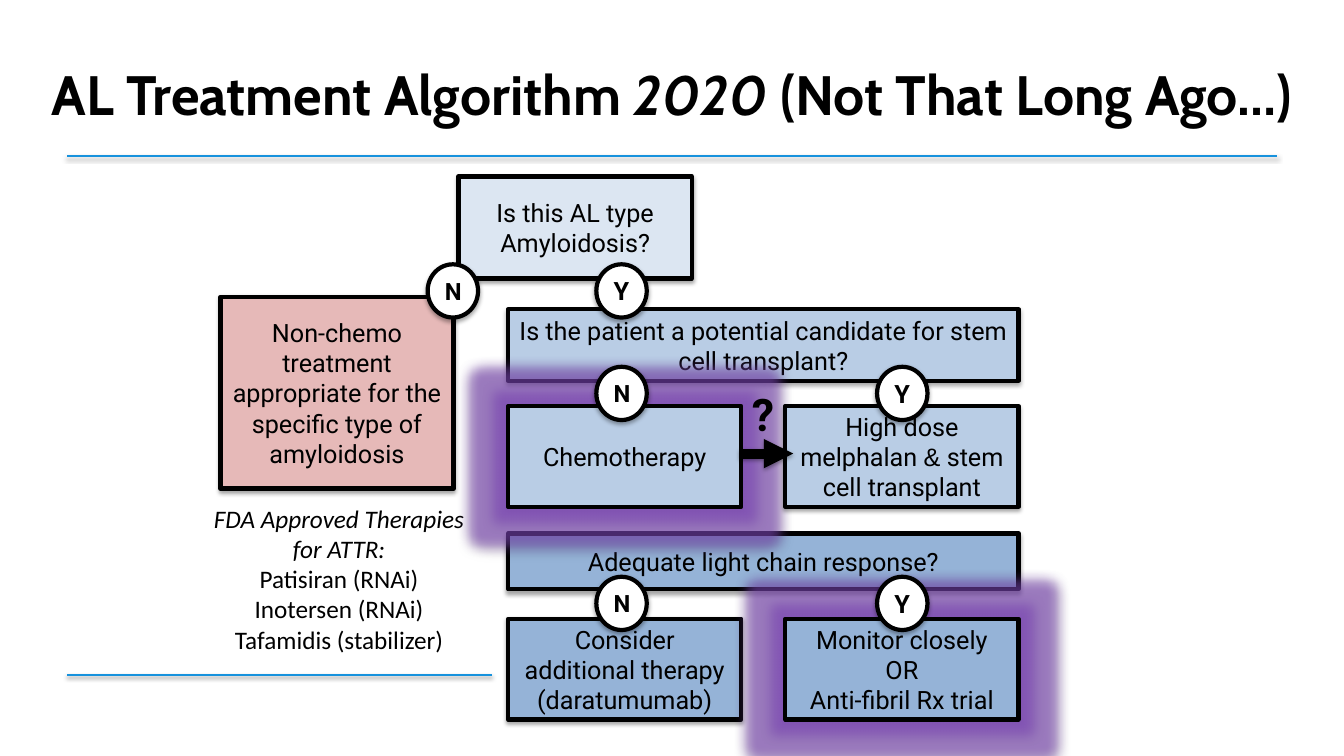
from dataclasses import dataclass

from lxml import etree
from pptx import Presentation
from pptx.dml.color import RGBColor
from pptx.enum import shapes, text
from pptx.oxml import ns
from pptx.util import Pt


@dataclass(frozen=True)
class Theme:
    ink: str = "000000"
    paper: str = "FFFFFF"
    rule: str = "1792DD"
    glow: str = "7B45B5"
    first_step: str = "DCE6F2"
    other_type: str = "E6B9B8"
    transplant_step: str = "B9CDE5"
    response_step: str = "95B3D7"
    title_size: float = 39.6
    body_size: float = 18
    no_size: float = 17
    question_size: float = 32
    title_font: str = "Cabin"
    body_font: str = "Roboto"
    note_font: str = "Calibri"


THEME = Theme()
NARROW, WIDE = 166.5, 364.5
LEFT_COLUMN, RIGHT_COLUMN = 363, 561
NO_X, YES_X = 426, 626.5
STEP_HEIGHT = 72


def color(code):
    return RGBColor.from_string(code)


def write(shape, paragraphs, font=THEME.body_font, size=THEME.body_size, bold=False,
          italic=False, align=text.PP_ALIGN.CENTER, anchor=text.MSO_ANCHOR.MIDDLE, wrap=True):
    """Each paragraph is a string or a list of (words, format changes) runs."""
    frame = shape.text_frame
    frame.word_wrap = wrap
    frame.vertical_anchor = anchor
    for index, content in enumerate(paragraphs):
        paragraph = frame.add_paragraph() if index else frame.paragraphs[0]
        paragraph.alignment = align
        for words, changes in [(content, {})] if isinstance(content, str) else content:
            run = paragraph.add_run()
            run.text = words
            run.font.name = changes.get("font", font)
            run.font.size = Pt(size)
            run.font.bold = bold
            run.font.italic = changes.get("italic", italic)
            run.font.color.rgb = color(THEME.ink)


def add_effects(shape, distance, opacity, glow=False):
    """Give a shape or line a soft shadow below, and a glow if asked."""
    def child(parent, tag, **attributes):
        return etree.SubElement(parent, ns.qn(tag), {k: str(v) for k, v in attributes.items()})

    def tint(parent, code, percent):
        child(child(parent, "a:srgbClr", val=code), "a:alpha", val=percent * 1000)

    effects = child(shape._element.spPr, "a:effectLst")
    if glow:
        tint(child(effects, "a:glow", rad=Pt(18)), THEME.glow, 60)
    shadow = child(effects, "a:outerShdw", blurRad=Pt(3.1), dist=Pt(distance),
                   dir=5400000, rotWithShape=0)
    tint(shadow, THEME.ink, opacity)


def add_node(slide, kind, left, top, width, height, fill, paragraphs, glow=False, **style):
    node = slide.shapes.add_shape(kind, Pt(left), Pt(top), Pt(width), Pt(height))
    node.fill.solid()
    node.fill.fore_color.rgb = color(fill)
    node.line.color.rgb = color(THEME.ink)
    node.line.width = Pt(3)
    add_effects(node, 1.8, 35, glow)
    write(node, paragraphs, **style)


def add_step(slide, left, top, width, height, fill, paragraphs, glow=False):
    add_node(slide, shapes.MSO_SHAPE.RECTANGLE, left, top, width, height, fill, paragraphs, glow)


def add_answer(slide, left, top, letter):
    size = THEME.no_size if letter == "N" else THEME.body_size
    add_node(slide, shapes.MSO_SHAPE.OVAL, left, top, 36, 38, THEME.paper, [letter],
             size=size, bold=True)


def add_line(slide, start, end, y, stroke, width, arrow=False):
    line = slide.shapes.add_connector(shapes.MSO_CONNECTOR.STRAIGHT,
                                      Pt(start), Pt(y), Pt(end), Pt(y))
    line.line.color.rgb = color(stroke)
    line.line.width = Pt(width)
    if arrow:
        etree.SubElement(line.line._get_or_add_ln(), ns.qn("a:tailEnd"), type="triangle")
    add_effects(line, 1.6, 38)


def add_note(slide, left, top, width, height, paragraphs, **style):
    note = slide.shapes.add_textbox(Pt(left), Pt(top), Pt(width), Pt(height))
    write(note, paragraphs, anchor=text.MSO_ANCHOR.TOP, wrap=False, **style)


def add_title(slide):
    title = slide.shapes.title
    title.left, title.top, title.width, title.height = Pt(0), Pt(21.6), Pt(960), Pt(90)
    title.text_frame.auto_size = text.MSO_AUTO_SIZE.NONE
    write(title, [[("AL Treatment Algorithm ", {}), ("2020 ", {"italic": True}),
                   ("(Not That Long Ago…)", {})]],
          font=THEME.title_font, size=THEME.title_size, bold=True)


def add_type_question(slide):
    add_step(slide, 327.6, 126, NARROW, 73, THEME.first_step, ["Is this AL type Amyloidosis?"])
    add_step(slide, 157.5, 212, NARROW, 137, THEME.other_type,
             ["Non-chemo treatment appropriate for the specific type of amyloidosis"])
    add_answer(slide, 305.5, 188.8, "N")
    add_note(slide, 144.7, 355.7, 195, 116.6,
             [[("FDA Approved Therapies", {"italic": True})], [("for ATTR:", {"italic": True})],
              "Patisiran (RNAi)", "Inotersen (RNAi)", "Tafamidis (stabilizer)"],
             font=THEME.note_font)


def add_response_question(slide):
    fill = THEME.response_step
    add_step(slide, LEFT_COLUMN, 381, WIDE, 40, fill, ["Adequate light chain response?"])
    add_step(slide, LEFT_COLUMN, 442, NARROW, STEP_HEIGHT, fill,
             ["Consider additional therapy", "(daratumumab)"])
    add_step(slide, RIGHT_COLUMN, 442, NARROW, STEP_HEIGHT, fill,
             ["Monitor closely", "OR", "Anti-fibril Rx trial"], glow=True)
    add_answer(slide, YES_X, 412, "Y")
    add_answer(slide, NO_X, 412, "N")


def add_transplant_question(slide):
    fill = THEME.transplant_step
    add_step(slide, LEFT_COLUMN, 221, WIDE, 51, fill,
             ["Is the patient a potential candidate for stem cell transplant?"])
    add_answer(slide, NO_X, 188.8, "Y")
    add_step(slide, LEFT_COLUMN, 290, NARROW, STEP_HEIGHT, fill, ["Chemotherapy"], glow=True)
    add_step(slide, RIGHT_COLUMN, 290, NARROW, STEP_HEIGHT, fill,
             [[("High dose melphalan ", {}), ("&", {"font": "Arial"}),
               (" stem cell transplant", {})]])
    add_answer(slide, YES_X, 262, "Y")
    add_answer(slide, NO_X, 262, "N")
    add_line(slide, 528.5, 566.6, 324, THEME.ink, 7, arrow=True)
    add_note(slide, 530, 273, 29, 46, ["?"], size=THEME.question_size, bold=True,
             align=text.PP_ALIGN.LEFT)


def main():
    deck = Presentation()
    deck.slide_width, deck.slide_height = Pt(960), Pt(540)
    slide = deck.slides.add_slide(deck.slide_layouts[5])
    add_line(slide, 48, 912, 111.6, THEME.rule, 1.5)
    add_line(slide, 48, 351.5, 482.4, THEME.rule, 1.5)
    add_title(slide)
    add_type_question(slide)
    add_response_question(slide)
    add_transplant_question(slide)
    deck.save("out.pptx")


if __name__ == "__main__":
    main()
